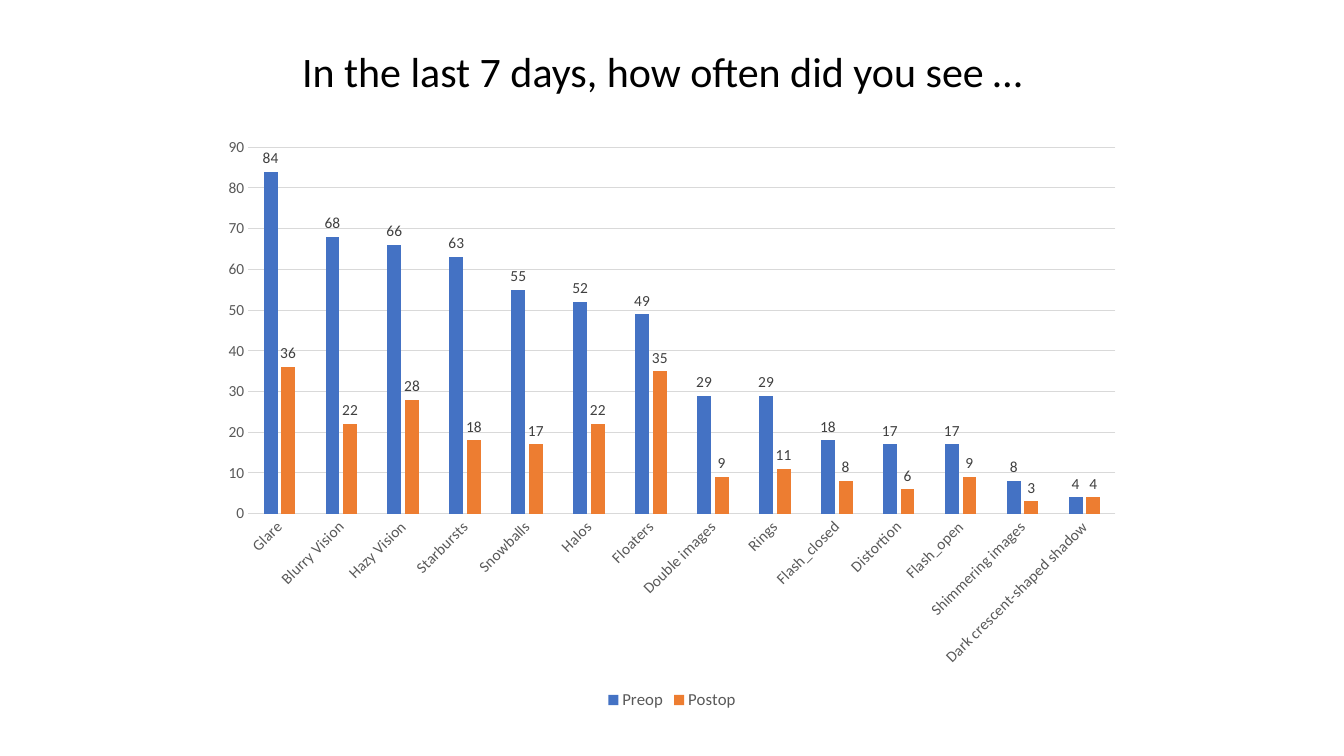
from pptx import Presentation
from pptx.chart.data import CategoryChartData
from pptx.dml.color import RGBColor
from pptx.enum.chart import XL_CHART_TYPE as ChartType
from pptx.enum.chart import XL_LABEL_POSITION as LabelPosition
from pptx.enum.chart import XL_LEGEND_POSITION as LegendPosition
from pptx.enum.chart import XL_TICK_MARK as TickMark
from pptx.enum.text import MSO_ANCHOR, PP_ALIGN
from pptx.util import Emu, Pt

EMU_PER_PX = 9525
FONT = "Calibri"
BLACK, DARK_GREY, GREY, LIGHT_GREY = "000000", "404040", "595959", "D9D9D9"
SERIES_COLORS = {"Preop": "4472C4", "Postop": "ED7D31"}
SYMPTOMS = [
    ("Glare", 84, 36),
    ("Blurry Vision", 68, 22),
    ("Hazy Vision", 66, 28),
    ("Starbursts", 63, 18),
    ("Snowballs", 55, 17),
    ("Halos", 52, 22),
    ("Floaters", 49, 35),
    ("Double images", 29, 9),
    ("Rings", 29, 11),
    ("Flash_closed", 18, 8),
    ("Distortion", 17, 6),
    ("Flash_open", 17, 9),
    ("Shimmering images", 8, 3),
    ("Dark crescent-shaped shadow", 4, 4),
]


def px(length):
    """Turn whole pixels into EMU."""
    return Emu(length * EMU_PER_PX)


def color(value):
    """Turn a hex string into a colour."""
    return RGBColor.from_string(value)


def style_font(font, size, value):
    """Set the typeface, size and colour of a font."""
    font.name = FONT
    font.size = Pt(size)
    font.bold = False
    font.color.rgb = color(value)


def style_line(line):
    """Draw an axis or grid line thin and light grey."""
    line.color.rgb = color(LIGHT_GREY)
    line.width = Pt(0.75)


def set_title(slide, text):
    """Place and format the slide title."""
    title = slide.shapes.title
    title.left, title.top, title.width, title.height = map(px, (280, 0, 702, 96))
    frame = title.text_frame
    frame.text = text
    frame.word_wrap = True
    frame.vertical_anchor = MSO_ANCHOR.BOTTOM
    frame.margin_left = frame.margin_right = px(7)
    frame.margin_top = frame.margin_bottom = px(4)
    paragraph = frame.paragraphs[0]
    paragraph.alignment = PP_ALIGN.CENTER
    paragraph.line_spacing = 0.9
    style_font(paragraph.runs[0].font, 30, BLACK)


def style_axes(chart):
    """Format both axes and the grid lines."""
    category_axis, value_axis = chart.category_axis, chart.value_axis
    for axis in (category_axis, value_axis):
        axis.major_tick_mark = axis.minor_tick_mark = TickMark.NONE
        style_font(axis.tick_labels.font, 11, GREY)
    style_line(category_axis.format.line)
    category_axis._element.txPr.bodyPr.set("rot", "-2700000")
    value_axis.format.line.fill.background()
    value_axis.minimum_scale, value_axis.maximum_scale = 0, 90
    value_axis.major_unit = 10
    value_axis.has_major_gridlines = True
    style_line(value_axis.major_gridlines.format.line)


def style_series(series):
    """Fill the columns of a series and label their values."""
    series.format.fill.solid()
    series.format.fill.fore_color.rgb = color(SERIES_COLORS[series.name])
    series.invert_if_negative = False
    labels = series.data_labels
    labels.show_value = True
    labels.position = LabelPosition.OUTSIDE_END
    style_font(labels.font, 11, DARK_GREY)


def add_symptom_chart(slide):
    """Add the clustered columns of symptoms before and after surgery."""
    names, *columns = zip(*SYMPTOMS)
    data = CategoryChartData()
    data.categories = names
    for name, values in zip(SERIES_COLORS, columns):
        data.add_series(name, values)
    chart = slide.shapes.add_chart(
        ChartType.COLUMN_CLUSTERED, *map(px, (200, 120, 880, 560)), data
    ).chart
    style_font(chart.font, 10, BLACK)
    chart.has_title = False
    chart.has_legend = True
    chart.legend.position = LegendPosition.BOTTOM
    chart.legend.include_in_layout = False
    style_font(chart.legend.font, 12, GREY)
    plot = chart.plots[0]
    plot.gap_width, plot.overlap = 219, -27
    plot.vary_by_categories = False
    style_axes(chart)
    for series in plot.series:
        style_series(series)


def main():
    """Build and save the slide."""
    presentation = Presentation()
    presentation.slide_width, presentation.slide_height = px(1280), px(720)
    slide = presentation.slides.add_slide(presentation.slide_layouts[5])
    add_symptom_chart(slide)
    set_title(slide, "In the last 7 days, how often did you see …")
    presentation.save("out.pptx")


if __name__ == "__main__":
    main()
